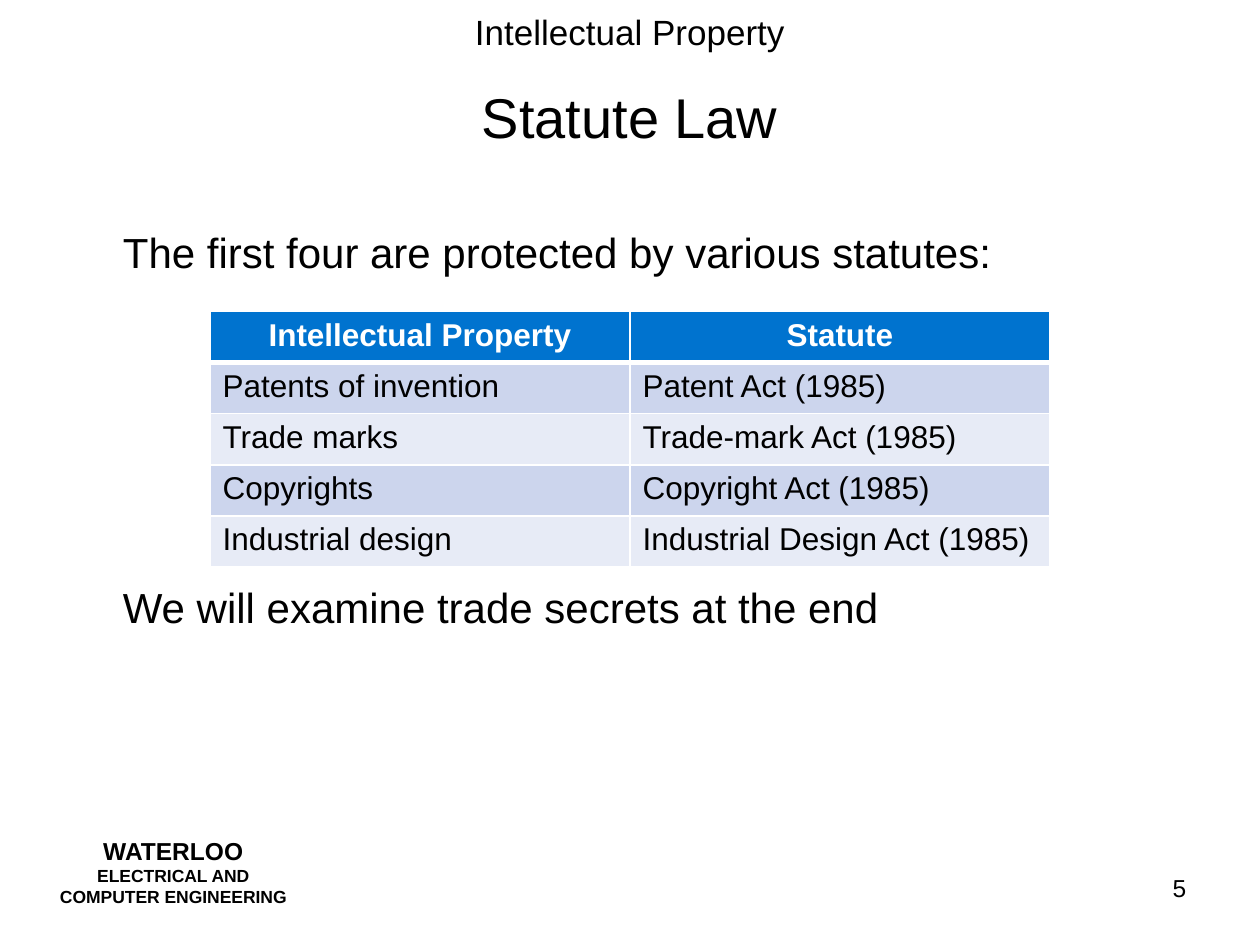
import copy

import pptx
import pptx.dml.color
import pptx.enum.text
import pptx.oxml
import pptx.oxml.ns
import pptx.util

Pt = pptx.util.Pt
ALIGN = pptx.enum.text.PP_ALIGN
ANCHOR = pptx.enum.text.MSO_ANCHOR
NO_FIT = pptx.enum.text.MSO_AUTO_SIZE.NONE
BLACK, WHITE, BLUE = "000000", "FFFFFF", "0073CF"
BANDS = ["CCD5ED", "E7EBF6"]
STATUTES = [
    ("Intellectual Property", "Statute"),
    ("Patents of invention", "Patent Act (1985)"),
    ("Trade marks", "Trade-mark Act (1985)"),
    ("Copyrights", "Copyright Act (1985)"),
    ("Industrial design", "Industrial Design Act (1985)"),
]


def rgb(value):
    """Turn a hex string into a colour."""
    return pptx.dml.color.RGBColor.from_string(value)


def set_attrs(obj, values):
    """Set each attribute of obj from a dict."""
    for name, value in values.items():
        setattr(obj, name, value)


def place(sp, box):
    """Move a shape to a box of left, top, width and height in points."""
    set_attrs(sp, dict(zip(("left", "top", "width", "height"), map(Pt, box))))


def write(p, text, size, color=BLACK, bold=False, align=ALIGN.LEFT):
    """Fill a paragraph with formatted text, line breaks included."""
    p.text, p.alignment = text, align
    for r in p.runs:
        set_attrs(r.font, {"name": "Arial", "size": Pt(size), "bold": bold})
        r.font.color.rgb = rgb(color)
    for br in p._p.findall(pptx.oxml.ns.qn("a:br")):
        br.append(copy.deepcopy(p.runs[0]._r.rPr))


def add_text(s, box, lines, align=ALIGN.CENTER, wrap=True, anchor=ANCHOR.TOP, bold=False):
    """Add a text box with one paragraph for each (text, size) pair."""
    tf = s.shapes.add_textbox(*map(Pt, box)).text_frame
    set_attrs(tf, {"word_wrap": wrap, "vertical_anchor": anchor})
    for i, (text, size) in enumerate(lines):
        p = tf.add_paragraph() if i else tf.paragraphs[0]
        write(p, text, size, bold=bold, align=align)


def add_title(s, box, text):
    """Place and fill the title placeholder."""
    sp = s.shapes.title
    place(sp, box)
    set_attrs(sp.text_frame, {"vertical_anchor": ANCHOR.MIDDLE, "auto_size": NO_FIT})
    write(sp.text_frame.paragraphs[0], text, 32, align=ALIGN.CENTER)


def add_body(s, box, lines, gap):
    """Fill the body placeholder with unbulleted lines set apart by a gap."""
    sp = s.placeholders[1]
    place(sp, box)
    tf = sp.text_frame
    tf.auto_size = NO_FIT
    for i, text in enumerate(lines):
        p = tf.add_paragraph() if i else tf.paragraphs[0]
        write(p, text, 24)
        p.space_before = Pt(gap if i else 0)
        pPr = p._p.get_or_add_pPr()
        pPr.set("marL", str(Pt(27)))
        pPr.set("indent", "0")
        pPr.append(pptx.oxml.parse_xml(f'<a:buNone {pptx.oxml.ns.nsdecls("a")}/>'))


def set_borders(cell, widths, color):
    """Give a cell solid borders, with widths keyed by side."""
    tcPr = cell._tc.get_or_add_tcPr()
    for i, (side, width) in enumerate(widths.items()):
        tcPr.insert(i, pptx.oxml.parse_xml(
            f'<a:ln{side} {pptx.oxml.ns.nsdecls("a")} w="{Pt(width)}"><a:solidFill>'
            f'<a:srgbClr val="{color}"/></a:solidFill></a:ln{side}>'))


def add_statutes(s, box, rows):
    """Add the banded table of statutes under a blue header row."""
    table = s.shapes.add_table(len(rows), len(rows[0]), *map(Pt, box)).table
    for i, row in enumerate(rows):
        head = i == 0
        for j, text in enumerate(row):
            cell = table.cell(i, j)
            cell.fill.solid()
            cell.fill.fore_color.rgb = rgb(BLUE if head else BANDS[(i - 1) % 2])
            write(cell.text_frame.paragraphs[0], text, 18, WHITE if head else BLACK,
                  head, ALIGN.CENTER if head else ALIGN.LEFT)
            set_borders(cell, {"L": 1, "R": 1, "T": 3 if i == 1 else 1, "B": 3 if head else 1}, WHITE)


def add_frame(s):
    """Add the running header, department name and page number."""
    add_text(s, (36, 8, 648, 20), [("Intellectual Property", 20)], anchor=ANCHOR.MIDDLE)
    add_text(s, (26.5, 474, 145, 48),
             [("WATERLOO", 14), ("ELECTRICAL AND\nCOMPUTER ENGINEERING", 10)], bold=True)
    add_text(s, (663, 495.5, 32, 24), [("5", 14)], align=ALIGN.LEFT, wrap=False)


def main():
    """Build and save the slide."""
    prs = pptx.Presentation()
    set_attrs(prs, {"slide_width": Pt(720), "slide_height": Pt(540)})
    s = prs.slides.add_slide(prs.slide_layouts[1])
    add_frame(s)
    add_title(s, (36, 21.6, 648, 90), "Statute Law")
    add_body(s, (36, 126, 648, 321),
             ["The first four are protected by various statutes:",
              "We will examine trade secrets at the end"], 174)
    add_statutes(s, (120, 178, 480, 146), STATUTES)
    prs.save("out.pptx")


if __name__ == "__main__":
    main()
